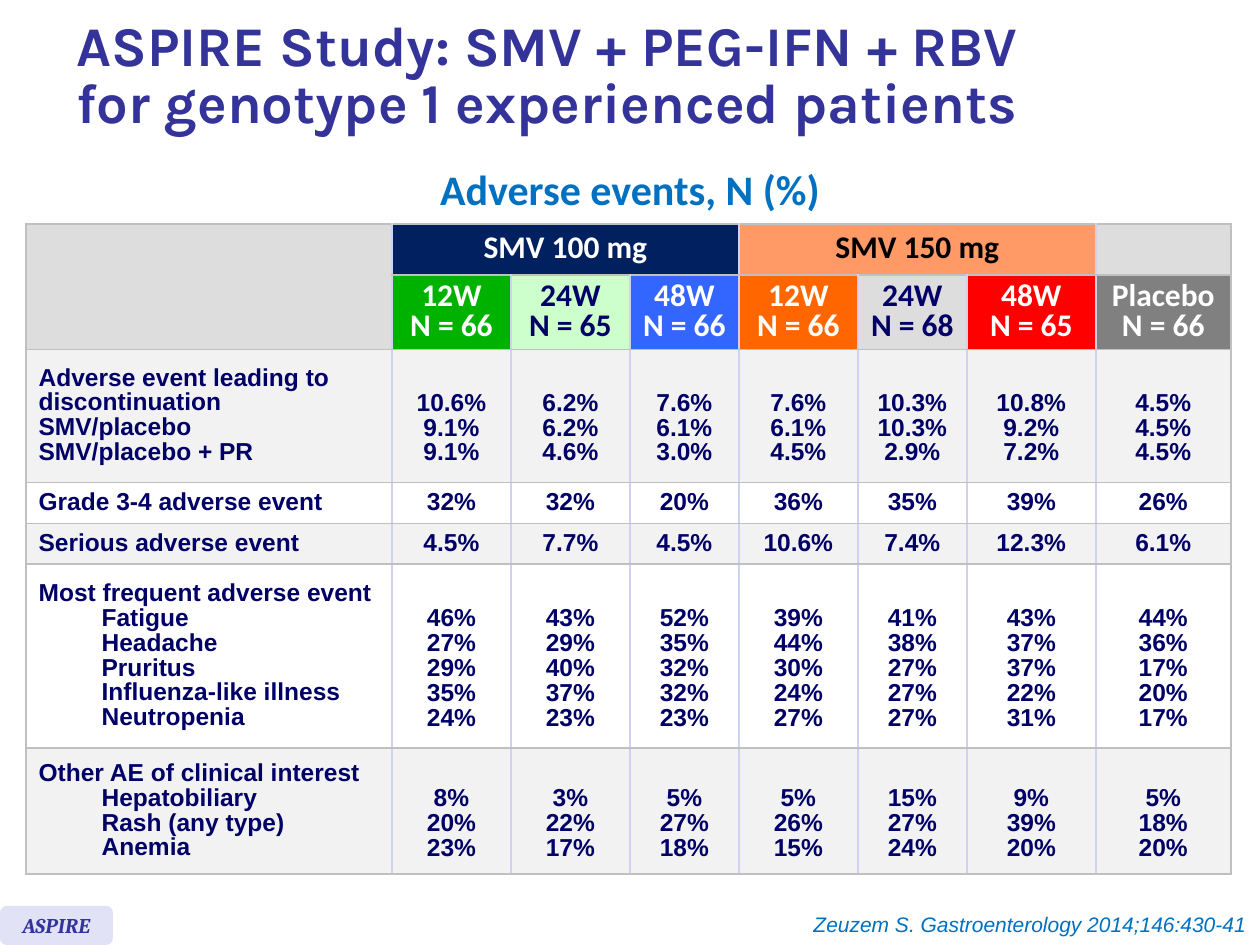
"""Build the adverse events slide of the ASPIRE study."""
from dataclasses import dataclass

from lxml import etree
from pptx import Presentation
from pptx.dml.color import RGBColor
from pptx.enum.shapes import MSO_SHAPE
from pptx.enum.text import MSO_ANCHOR, PP_ALIGN
from pptx.oxml.ns import qn
from pptx.util import Pt

LEFT, MID, RIGHT = PP_ALIGN.LEFT, PP_ALIGN.CENTER, PP_ALIGN.RIGHT
TOP, CENTER = MSO_ANCHOR.TOP, MSO_ANCHOR.MIDDLE
ROUND = MSO_SHAPE.ROUNDED_RECTANGLE
SCALE = 914400 / 126
NAVY, WHITE, BLACK = "000066", "FFFFFF", "000000"
BLUE, INDIGO = "0070C0", "333399"
PALE, GRAY, RULE, LILAC = "F2F2F2", "DDDDDD", "C0C0C0", "D0D0F0"
WIDTHS = (366, 119, 119, 109, 119, 109, 129, 135)
HEIGHTS = (40, 69, 133, 41, 41, 184, 126)
HEAD = {"size": Pt(18), "name": "Calibri", "bold": True}
BODY = {"size": Pt(14), "name": "Arial", "bold": True}


@dataclass
class Line:
    """A paragraph of text."""
    text: str
    deep: bool = False


@dataclass
class Label:
    """A free text on the slide."""
    text: str
    box: tuple[int, int, int, int]
    color: str
    font: dict
    align: int
    gap: object = None
    anchor: int = TOP
    wrap: bool = False
    fill: str = ""


@dataclass
class Arm:
    """A treatment arm heading."""
    name: str
    size: int
    fill: str
    color: str = WHITE


@dataclass
class Group:
    """A body row: its heading, sub-items and values by arm."""
    head: str
    items: tuple[str, ...]
    values: tuple[str, ...]
    fill: str
    deep: bool = True


LABELS = (
    Label("ASPIRE Study: SMV + PEG-IFN + RBV\vfor genotype 1 experienced patients",
          (64, 10, 1150, 135), INDIGO,
          {"size": Pt(32), "name": "Karla", "bold": True}, LEFT, 0.85, CENTER, True),
    Label("Zeuzem S. Gastroenterology 2014;146:430-41", (788, 905, 471, 38), BLUE,
          {"size": Pt(12), "name": "Arial", "italic": True}, RIGHT),
    Label("ASPIRE", (0, 906, 113, 39), INDIGO,
          {"size": Pt(12), "name": "Cambria", "bold": True, "italic": True},
          MID, anchor=CENTER, fill="E2E2F6"),
    Label("Adverse events, N (%)", (425, 166, 410, 55), BLUE,
          {"size": Pt(24), "name": "Calibri", "bold": True}, MID, Pt(23.6)),
)
ARMS = (
    Arm("12W", 66, "00B200"), Arm("24W", 65, "CCFFCC", NAVY),
    Arm("48W", 66, "3366FF"), Arm("12W", 66, "FF6600"),
    Arm("24W", 68, GRAY, NAVY), Arm("48W", 65, "FF0000"),
    Arm("Placebo", 66, "808080"),
)
GROUPS = (
    Group("Adverse event leading to discontinuation",
          ("SMV/placebo", "SMV/placebo + PR"),
          ("10.6% 9.1% 9.1%", "6.2% 6.2% 4.6%", "7.6% 6.1% 3.0%",
           "7.6% 6.1% 4.5%", "10.3% 10.3% 2.9%", "10.8% 9.2% 7.2%",
           "4.5% 4.5% 4.5%"), PALE, False),
    Group("Grade 3-4 adverse event", (),
          ("32%", "32%", "20%", "36%", "35%", "39%", "26%"), WHITE),
    Group("Serious adverse event", (),
          ("4.5%", "7.7%", "4.5%", "10.6%", "7.4%", "12.3%", "6.1%"), PALE),
    Group("Most frequent adverse event",
          ("Fatigue", "Headache", "Pruritus", "Influenza-like illness", "Neutropenia"),
          ("46% 27% 29% 35% 24%", "43% 29% 40% 37% 23%", "52% 35% 32% 32% 23%",
           "39% 44% 30% 24% 27%", "41% 38% 27% 27% 27%", "43% 37% 37% 22% 31%",
           "44% 36% 17% 20% 17%"), WHITE),
    Group("Other AE of clinical interest",
          ("Hepatobiliary", "Rash (any type)", "Anemia"),
          ("8% 20% 23%", "3% 22% 17%", "5% 27% 18%", "5% 26% 15%",
           "15% 27% 24%", "9% 39% 20%", "5% 18% 20%"), PALE),
)


def px(num: int) -> int:
    """Turn pixels into EMU."""
    return round(num * SCALE)


def paint(fill, color: str) -> None:
    """Give a fill a solid colour."""
    fill.solid()
    fill.fore_color.rgb = RGBColor.from_string(color)


def write(frame, lines: list[Line], color: str, font: dict, align: int, gap) -> None:
    """Write lines into a text frame."""
    for pos, line in enumerate(lines):
        para = frame.add_paragraph() if pos else frame.paragraphs[0]
        para.text, para.alignment, para.line_spacing = line.text, align, gap
        if line.deep:
            para.level = 1
            props = para._p.get_or_add_pPr()
            props.set("marL", str(px(63)))
            props.set("indent", "0")
        for run in para.runs:
            for key, val in font.items():
                setattr(run.font, key, val)
            run.font.color.rgb = RGBColor.from_string(color)


def edge(cell, col: int) -> None:
    """Draw the four borders of a cell."""
    left = LILAC if col else RULE
    right = LILAC if col < len(WIDTHS) - 1 else RULE
    props = cell._tc.get_or_add_tcPr()
    sides = zip(("lnL", "lnR", "lnT", "lnB"), (left, right, RULE, RULE))
    for pos, (side, color) in enumerate(sides):
        line = etree.Element(qn(f"a:{side}"), w="12700")
        fill = etree.SubElement(line, qn("a:solidFill"))
        etree.SubElement(fill, qn("a:srgbClr"), val=color)
        props.insert(pos, line)


def head(table) -> None:
    """Fill the two heading rows."""
    for row, col in ((0, 0), (1, 0), (0, 7)):
        paint(table.cell(row, col).fill, GRAY)
    table.cell(0, 0).merge(table.cell(1, 0))
    doses = (("SMV 100 mg", "002060", WHITE), ("SMV 150 mg", "FF9966", BLACK))
    for pos, (name, fill, color) in enumerate(doses):
        col = 1 + 3 * pos
        cell = table.cell(0, col)
        cell.merge(table.cell(0, col + 2))
        paint(cell.fill, fill)
        write(cell.text_frame, [Line(name)], color, HEAD, MID, 0.8)
    for col, arm in enumerate(ARMS, 1):
        cell = table.cell(1, col)
        paint(cell.fill, arm.fill)
        lines = [Line(arm.name), Line(f"N = {arm.size}")]
        write(cell.text_frame, lines, arm.color, HEAD, MID, 0.8)


def body(table, row: int, group: Group) -> None:
    """Fill one body row."""
    lines = [Line(group.head)] + [Line(item, group.deep) for item in group.items]
    first = table.cell(row, 0)
    paint(first.fill, group.fill)
    write(first.text_frame, lines, NAVY, BODY, LEFT, 0.9)
    for col, text in enumerate(group.values, 1):
        cell = table.cell(row, col)
        paint(cell.fill, group.fill)
        write(cell.text_frame, [Line(val) for val in text.split()],
              NAVY, BODY, MID, 0.9)
        if group.items:
            cell.margin_top = px(32)


def grid(slide) -> None:
    """Draw the table of adverse events."""
    box = map(px, (26, 224, sum(WIDTHS), sum(HEIGHTS)))
    table = slide.shapes.add_table(len(HEIGHTS), len(WIDTHS), *box).table
    table.first_row = table.horz_banding = False
    for col, width in zip(table.columns, WIDTHS):
        col.width = px(width)
    for row, height in zip(table.rows, HEIGHTS):
        row.height = px(height)
    head(table)
    for row, group in enumerate(GROUPS, 2):
        body(table, row, group)
    for row in table.rows:
        for col, cell in enumerate(row.cells):
            cell.vertical_anchor = CENTER
            edge(cell, col)


def label(slide, item: Label) -> None:
    """Draw a text, on a rounded tag if it has a fill."""
    box = map(px, item.box)
    if item.fill:
        shape = slide.shapes.add_shape(ROUND, *box)
        shape.shadow.inherit = False
        shape.line.fill.background()
        paint(shape.fill, item.fill)
    else:
        shape = slide.shapes.add_textbox(*box)
    frame = shape.text_frame
    frame.word_wrap, frame.vertical_anchor = item.wrap, item.anchor
    write(frame, [Line(item.text)], item.color, item.font, item.align, item.gap)


def main() -> None:
    """Build and save the slide."""
    deck = Presentation()
    deck.slide_width, deck.slide_height = px(1260), px(945)
    slide = deck.slides.add_slide(deck.slide_layouts[6])
    grid(slide)
    for item in LABELS:
        label(slide, item)
    deck.save("out.pptx")


if __name__ == "__main__":
    main()
